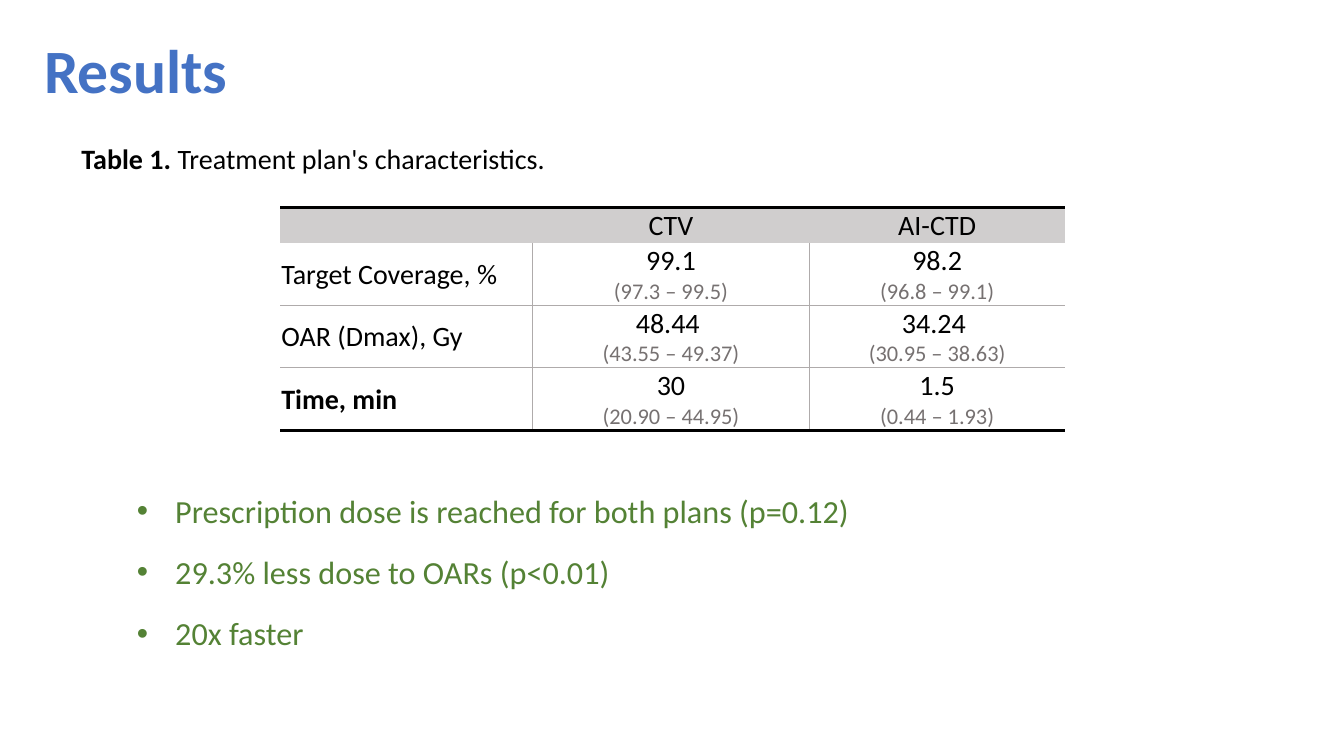
from lxml.etree import SubElement
from pptx import Presentation
from pptx.dml.color import RGBColor
from pptx.enum.text import MSO_ANCHOR, PP_ALIGN
from pptx.oxml.ns import qn
from pptx.util import Inches, Pt

WIDTH, HEIGHT = 13.33, 7.5
BLACK, BLUE, GREEN = "000000", "4472C4", "548235"
WHITE, HEADER_GRAY, LINE_GRAY, RANGE_GRAY = "FFFFFF", "D0CECE", "AFABAB", "767171"

COLUMN_WIDTHS = [2.5, 2.75, 2.53]
ROW_HEIGHTS = [0.35, 0.62, 0.62, 0.62]
HEADINGS = ["", "CTV", "AI-CTD"]
MEASURES = [
    ("Target Coverage, %", ("99.1", "(97.3 – 99.5)"), ("98.2", "(96.8 – 99.1)")),
    ("OAR (Dmax), Gy", ("48.44 ", "(43.55 – 49.37)"), ("34.24 ", "(30.95 – 38.63)")),
    ("Time, min", ("30", "(20.90 – 44.95)"), ("1.5", "(0.44 – 1.93)")),
]
FINDINGS = [
    "Prescription dose is reached for both plans (p=0.12)",
    "29.3% less dose to OARs (p<0.01)",
    "20x faster",
]


def color(hex_value):
    return RGBColor.from_string(hex_value)


def add_run(paragraph, text, size, hex_value=BLACK, bold=False):
    run = paragraph.add_run()
    run.text = text
    font_values = {"name": "Calibri", "size": Pt(size), "bold": bold}
    for name, value in font_values.items():
        setattr(run.font, name, value)
    run.font.color.rgb = color(hex_value)


def add_text_box(slide, box, anchor=MSO_ANCHOR.TOP):
    frame = slide.shapes.add_textbox(*map(Inches, box)).text_frame
    frame.word_wrap = True
    frame.vertical_anchor = anchor
    return frame.paragraphs[0]


def add_title(slide, box):
    paragraph = add_text_box(slide, box, MSO_ANCHOR.MIDDLE)
    paragraph.line_spacing = 0.9
    add_run(paragraph, "Results", 44, BLUE, bold=True)


def add_caption(slide, box):
    paragraph = add_text_box(slide, box)
    add_run(paragraph, "Table 1. ", 20, bold=True)
    add_run(paragraph, "Treatment plan's characteristics.", 20)


def set_borders(cell, borders):
    """Draw the given sides of a cell and clear the others."""
    properties = cell._tc.get_or_add_tcPr()
    for position, side in enumerate("LRTB"):
        hex_value, width = borders.get(side, (None, 0))
        line = SubElement(properties, qn(f"a:ln{side}"), w=str(Pt(width)))
        if hex_value:
            fill = SubElement(line, qn("a:solidFill"))
            SubElement(fill, qn("a:srgbClr"), val=hex_value)
        else:
            SubElement(line, qn("a:noFill"))
        properties.insert(position, line)


def cell_borders(row, column):
    thin, thick = (LINE_GRAY, 1), (BLACK, 2)
    if row == 0:
        return {"T": thick}
    borders = {"B": thick if row == len(MEASURES) else thin}
    if row > 1:
        borders["T"] = thin
    if column > 0:
        borders["L"] = thin
    if column < len(COLUMN_WIDTHS) - 1:
        borders["R"] = thin
    return borders


def format_cell(cell, row, column):
    centred_row = row == 1 or (row > 1 and column == 0)
    cell_values = {
        "margin_left": Inches(0.01),
        "margin_right": Inches(0.01),
        "margin_top": Inches(0.01),
        "margin_bottom": 0,
        "vertical_anchor": MSO_ANCHOR.MIDDLE if centred_row else MSO_ANCHOR.BOTTOM,
    }
    for name, value in cell_values.items():
        setattr(cell, name, value)
    cell.fill.solid()
    cell.fill.fore_color.rgb = color(WHITE if row else HEADER_GRAY)
    set_borders(cell, cell_borders(row, column))


def fill_cell(cell, row, column, content):
    paragraph = cell.text_frame.paragraphs[0]
    if column == 0:
        if content:
            add_run(paragraph, content, 20, bold=row == len(MEASURES))
        return
    value, *value_range = [content] if row == 0 else content
    paragraph.alignment = PP_ALIGN.CENTER
    add_run(paragraph, value, 20)
    for text in value_range:
        range_paragraph = cell.text_frame.add_paragraph()
        range_paragraph.alignment = PP_ALIGN.CENTER
        add_run(range_paragraph, text, 16, RANGE_GRAY)


def add_plan_table(slide, left, top):
    rows = [HEADINGS, *MEASURES]
    size = sum(COLUMN_WIDTHS), sum(ROW_HEIGHTS)
    table = slide.shapes.add_table(
        len(rows), len(COLUMN_WIDTHS), *map(Inches, (left, top, *size))
    ).table
    table.first_row = table.horz_banding = False
    for column, width in zip(table.columns, COLUMN_WIDTHS):
        column.width = Inches(width)
    for row, height in zip(table.rows, ROW_HEIGHTS):
        row.height = Inches(height)
    for row, contents in enumerate(rows):
        for column, content in enumerate(contents):
            cell = table.cell(row, column)
            format_cell(cell, row, column)
            fill_cell(cell, row, column, content)


def add_findings(slide, box):
    left, top, width, height = box
    pitch = height / len(FINDINGS)
    for index, finding in enumerate(FINDINGS):
        paragraph = add_text_box(slide, (left, top + index * pitch, width, 0.49))
        properties = paragraph._p.get_or_add_pPr()
        indent = Inches(0.38)
        properties.set("marL", str(indent))
        properties.set("indent", str(-indent))
        SubElement(properties, qn("a:buFont"), typeface="Arial")
        SubElement(properties, qn("a:buChar"), char="•")
        add_run(paragraph, finding, 23, GREEN)


def main():
    presentation = Presentation()
    presentation.slide_width = Inches(WIDTH)
    presentation.slide_height = Inches(HEIGHT)
    slide = presentation.slides.add_slide(presentation.slide_layouts[6])

    # Heading and table
    add_title(slide, (0.34, 0, 11.5, 1.45))
    add_caption(slide, (0.71, 1.35, 7.04, 0.44))
    add_plan_table(slide, 2.78, 2.06)

    # Conclusions
    add_findings(slide, (1.26, 4.82, 7.54, 1.83))

    presentation.save("out.pptx")


if __name__ == "__main__":
    main()
